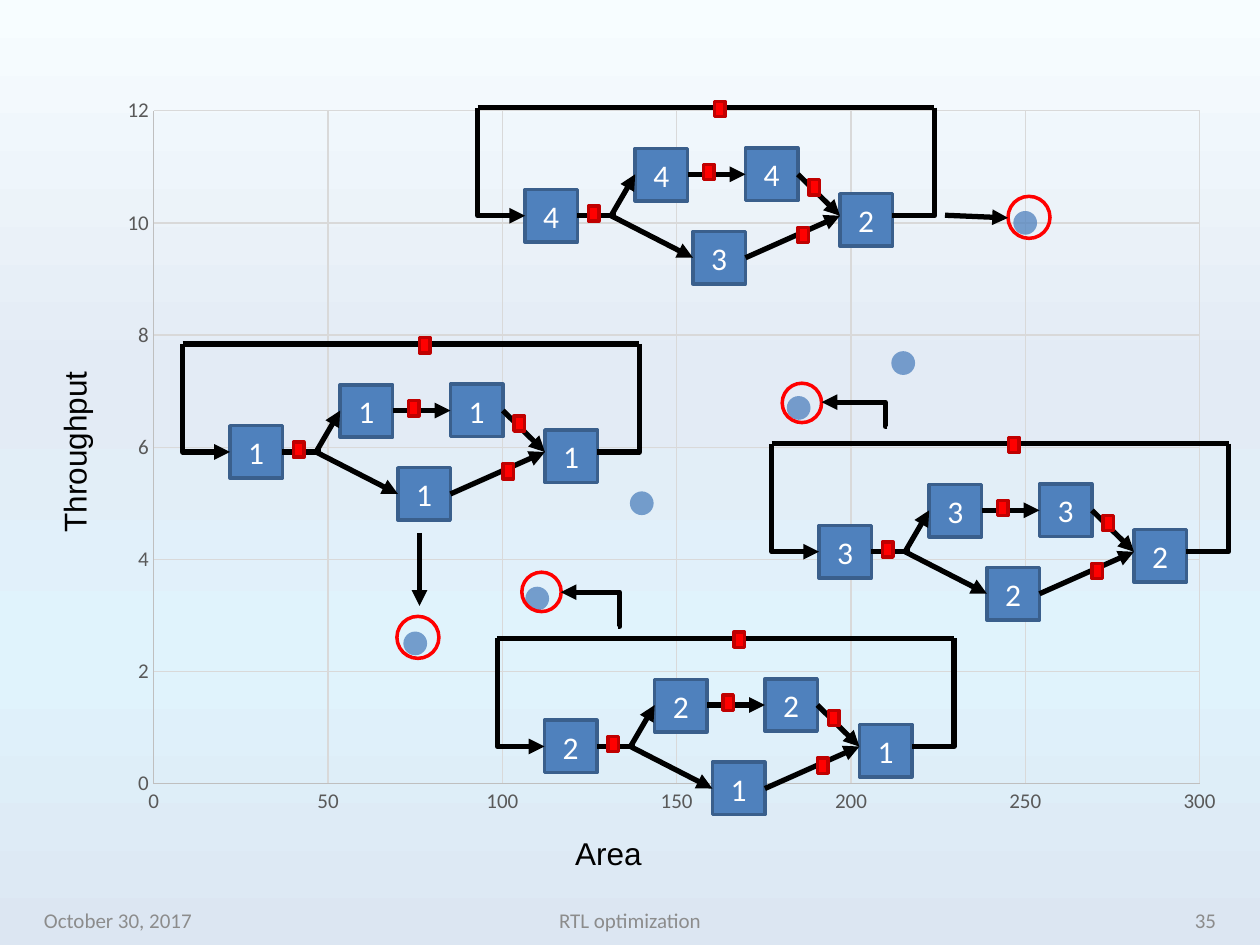
from lxml import etree
from pptx import Presentation
from pptx.chart.data import BubbleChartData
from pptx.dml.color import RGBColor
from pptx.enum.chart import XL_CHART_TYPE, XL_TICK_MARK
from pptx.enum.shapes import MSO_CONNECTOR, MSO_SHAPE
from pptx.enum.text import MSO_ANCHOR, PP_ALIGN
from pptx.oxml.ns import qn
from pptx.util import Inches, Pt

BUBBLE = XL_CHART_TYPE.BUBBLE
NO_TICK = XL_TICK_MARK.NONE
STRAIGHT, ELBOW = MSO_CONNECTOR.STRAIGHT, MSO_CONNECTOR.ELBOW
RECTANGLE, OVAL = MSO_SHAPE.RECTANGLE, MSO_SHAPE.OVAL
MIDDLE, TOP = MSO_ANCHOR.MIDDLE, MSO_ANCHOR.TOP
LEFT, CENTER, RIGHT = PP_ALIGN.LEFT, PP_ALIGN.CENTER, PP_ALIGN.RIGHT

BLACK = RGBColor(0x00, 0x00, 0x00)
WHITE = RGBColor(0xFF, 0xFF, 0xFF)
BLUE = RGBColor(0x4F, 0x81, 0xBD)
DARK_BLUE = RGBColor(0x3A, 0x5F, 0x8C)
RED = RGBColor(0xFF, 0x00, 0x00)
DARK_RED = RGBColor(0xC0, 0x00, 0x00)
FOOTER_GRAY = RGBColor(0x8C, 0x8C, 0x8C)
LABEL_GRAY = RGBColor(0x59, 0x59, 0x59)
AXIS_GRAY = RGBColor(0xBF, 0xBF, 0xBF)
GRID_GRAY = RGBColor(0xD9, 0xD9, 0xD9)
SKY = (
    (0, RGBColor(0xF7, 0xFD, 0xFF)),
    (40, RGBColor(0xE3, 0xEB, 0xF5)),
    (70, RGBColor(0xE0, 0xF3, 0xFC)),
    (100, RGBColor(0xDC, 0xE6, 0xF2)),
)

COLUMNS, ROWS = 240, 180
CELL = Inches(10) / COLUMNS
CHART_BOX = (20, 16, 216, 142)
PLOT_BOX = (29.3, 21.1, 199.2, 128.2)
POINTS = [(75, 2.5, 0.1), (110, 3.3, 0.1), (140, 5, 0.1), (185, 6.7, 0.1),
          (215, 7.5, 0.1), (250, 10, 0.1), (50, 2, 5)]

NODE_SIZE = 10
NODES = [(9, 15.6), (30, 7.8), (51, 7.7), (41, 23.6), (69, 16.4)]
REGISTERS = [(63.1, 13.7), (61, 22.8), (45.1, -1.2), (43, 10.8), (21.1, 18.7)]
UPPER, MAIN, LOWER = 12.7, 20.6, 28.6
LOOP_WIDTH = 87
ARROWS = [((40, UPPER), (51, UPPER)), ((61, UPPER), (69, MAIN)),
          ((51, LOWER), (69, MAIN)), ((25.4, MAIN), (30, UPPER)),
          ((25.4, MAIN), (41, LOWER))]
GRAPHS = [
    {"corner": (34.8, 65.5), "values": "11111", "ring": (75.6, 117.4, 8, 8),
     "arrow": ((79.9, 101.5), (79.9, 115.4))},
    {"corner": (91, 20.5), "values": "44432", "ring": (192, 37.4, 8, 8),
     "arrow": ((180, 41), (192, 41.5))},
    {"corner": (147, 84.5), "values": "33322", "ring": (149, 73, 7.5, 7.5),
     "bend": (156.5, 76.6, 12.5, 4.6), "adjust": 0.03},
    {"corner": (94.7, 121.6), "values": "22211", "ring": (99.4, 109, 7.5, 7.5),
     "bend": (106.8, 112.8, 11, 6.5), "adjust": -0.02},
]


def cells(values):
    """Turn grid cells into slide lengths."""
    return [round(value * CELL) for value in values]


def write(frame, text, size=18, font="Calibri", color=BLACK, align=LEFT, anchor=MIDDLE):
    """Fill a text frame with one formatted line."""
    frame.vertical_anchor = anchor
    para = frame.paragraphs[0]
    para.alignment = align
    span = para.add_run()
    span.text = text
    span.font.size = Pt(size)
    span.font.name = font
    span.font.color.rgb = color


def add_label(page, box, text, rotation=0, wrap=True, **style):
    """Place a text box on the grid."""
    label = page.shapes.add_textbox(*cells(box))
    label.rotation = rotation
    label.text_frame.word_wrap = wrap
    write(label.text_frame, text, **style)


def add_block(shapes, kind, box, line, fill=None):
    """Place an outlined shape, filled if a colour is given."""
    block = shapes.add_shape(kind, *cells(box))
    block.shadow.inherit = False
    if fill is None:
        block.fill.background()
    else:
        block.fill.solid()
        block.fill.fore_color.rgb = fill
    block.line.color.rgb = line
    block.line.width = Pt(2)
    return block


def add_wire(shapes, start, end, kind=STRAIGHT, arrow=True):
    """Draw a black connector, with an arrowhead if wanted."""
    wire = shapes.add_connector(kind, *cells((*start, *end)))
    wire.line.color.rgb = BLACK
    wire.line.width = Pt(3)
    etree.SubElement(wire._element.spPr, qn("a:effectLst"))
    if arrow:
        etree.SubElement(wire.line._get_or_add_ln(), qn("a:tailEnd"), type="triangle")
    return wire


def add_bend(shapes, box, preset, turn, flip=False, arrow=True, adjust=None):
    """Draw a turned elbow connector whose unturned frame is the box."""
    left, top, width, height = box
    near, far = (left + width, left) if flip else (left, left + width)
    bend = add_wire(shapes, (near, top), (far, top + height), ELBOW, arrow)
    properties = bend._element.spPr
    properties.find(qn("a:xfrm")).set("rot", str(turn * 60000))
    geometry = properties.find(qn("a:prstGeom"))
    geometry.set("prst", preset)
    if adjust is not None:
        guides = geometry.find(qn("a:avLst"))
        if guides is None:
            guides = etree.SubElement(geometry, qn("a:avLst"))
        etree.SubElement(guides, qn("a:gd"), name="adj1", fmla=f"val {round(adjust * 100000)}")


def add_drop(shapes, left, top, width, turn, **style):
    """Draw a wire that falls one loop height and then turns sideways."""
    shift = (MAIN - width) / 2
    add_bend(shapes, (left - shift, top + shift, MAIN, width), "bentConnector2", turn, **style)


def add_graph(page, corner, values, ring, arrow=None, bend=None, adjust=None):
    """Draw one dataflow loop at its corner and point it at its ringed bubble."""
    shapes = page.shapes.add_group_shape().shapes
    left, top = corner

    def place(point):
        """Move a point of the loop onto the slide grid."""
        return left + point[0], top + point[1]

    for node, value in zip(NODES, values):
        block = add_block(shapes, RECTANGLE, (*place(node), NODE_SIZE, NODE_SIZE), DARK_BLUE, BLUE)
        write(block.text_frame, value, color=WHITE, align=CENTER)
    for start, end in ARROWS:
        add_wire(shapes, place(start), place(end))
    add_wire(shapes, place((19, MAIN)), place((26.3, MAIN)), arrow=False)
    add_drop(shapes, left, top, 9, 270, flip=True)
    add_wire(shapes, corner, place((LOOP_WIDTH, 0)), arrow=False)
    add_drop(shapes, left + LOOP_WIDTH - 8, top, 8, 90, arrow=False)
    for register in REGISTERS:
        add_block(shapes, RECTANGLE, (*place(register), 2, 2.9), DARK_RED, RED)
    add_block(shapes, OVAL, ring, RED)
    if arrow:
        add_wire(shapes, *arrow)
    if bend:
        add_bend(shapes, bend, "bentConnector3", 180, adjust=adjust)


def style_axis(axis, maximum, step):
    """Set the scale, grid and labels of an axis."""
    axis.minimum_scale, axis.maximum_scale, axis.major_unit = 0, maximum, step
    axis.major_tick_mark = axis.minor_tick_mark = NO_TICK
    axis.has_major_gridlines = True
    for part, color in ((axis.major_gridlines, GRID_GRAY), (axis, AXIS_GRAY)):
        part.format.line.color.rgb = color
        part.format.line.width = Pt(0.75)
    font = axis.tick_labels.font
    font.size, font.name, font.color.rgb = Pt(12), "Calibri", LABEL_GRAY


def add_bubbles(page, box, plot_box):
    """Add the bubble chart of throughput against area."""
    data = BubbleChartData()
    series_data = data.add_series("Series 1")
    for point in POINTS:
        series_data.add_data_point(*point)
    chart = page.shapes.add_chart(BUBBLE, *cells(box), data).chart
    chart.has_legend = chart.has_title = False
    chart.font.size, chart.font.name = Pt(10), "Calibri"
    style_axis(chart.category_axis, 300, 50)
    style_axis(chart.value_axis, 12, 2)
    series = chart.plots[0].series[0]
    series.format.fill.solid()
    series.format.fill.fore_color.rgb = BLUE
    series.format.line.fill.background()
    color = series._element.find(qn("c:spPr")).find(".//" + qn("a:srgbClr"))
    etree.SubElement(color, qn("a:alpha"), val="75000")
    hidden = series.points[len(POINTS) - 1].format
    hidden.fill.background()
    hidden.line.fill.background()

    area = chart._chartSpace.find(".//" + qn("c:plotArea"))
    layout = area.find(qn("c:layout"))
    if layout is None:
        layout = etree.Element(qn("c:layout"))
        area.insert(0, layout)
    manual = etree.SubElement(layout, qn("c:manualLayout"))
    left, top, width, height = box
    shares = {"x": (plot_box[0] - left) / width, "y": (plot_box[1] - top) / height,
              "w": plot_box[2] / width, "h": plot_box[3] / height}
    settings = {"layoutTarget": "inner", "xMode": "edge", "yMode": "edge", **shares}
    for name, value in settings.items():
        etree.SubElement(manual, qn(f"c:{name}"), val=str(value))


def paint_background(page):
    """Fill the slide with the sky gradient from top to bottom."""
    fill = page.background.fill
    fill.gradient()
    fill.gradient_angle = 270
    stops = page._element.find(".//" + qn("a:gsLst"))
    for stop in list(stops):
        stops.remove(stop)
    for position, color in SKY:
        stop = etree.SubElement(stops, qn("a:gs"), pos=str(position * 1000))
        etree.SubElement(stop, qn("a:srgbClr"), val=str(color))


def add_footer(page, top, height):
    """Write the date, the title and the page number along the bottom."""
    for left, width, text, align in ((6, 56, "October 30, 2017", LEFT),
                                     (82, 76, "RTL optimization", CENTER),
                                     (178, 56, "35", RIGHT)):
        add_label(page, (left, top, width, height), text, size=12, color=FOOTER_GRAY, align=align)


def main():
    """Build the slide and save it."""
    deck = Presentation()
    deck.slide_width, deck.slide_height = cells((COLUMNS, ROWS))
    page = deck.slides.add_slide(deck.slide_layouts[6])
    paint_background(page)
    add_footer(page, 170.4, 9.6)
    add_bubbles(page, CHART_BOX, PLOT_BOX)
    title = {"font": "Arial", "anchor": TOP, "wrap": False}
    add_label(page, (107.2, 157.7, 17.6, 9.6), "Area", **title)
    add_label(page, (-3.8, 81.1, 35.8, 9.6), "Throughput", rotation=270, **title)
    for graph in GRAPHS:
        add_graph(page, **graph)
    deck.save("out.pptx")


if __name__ == "__main__":
    main()
